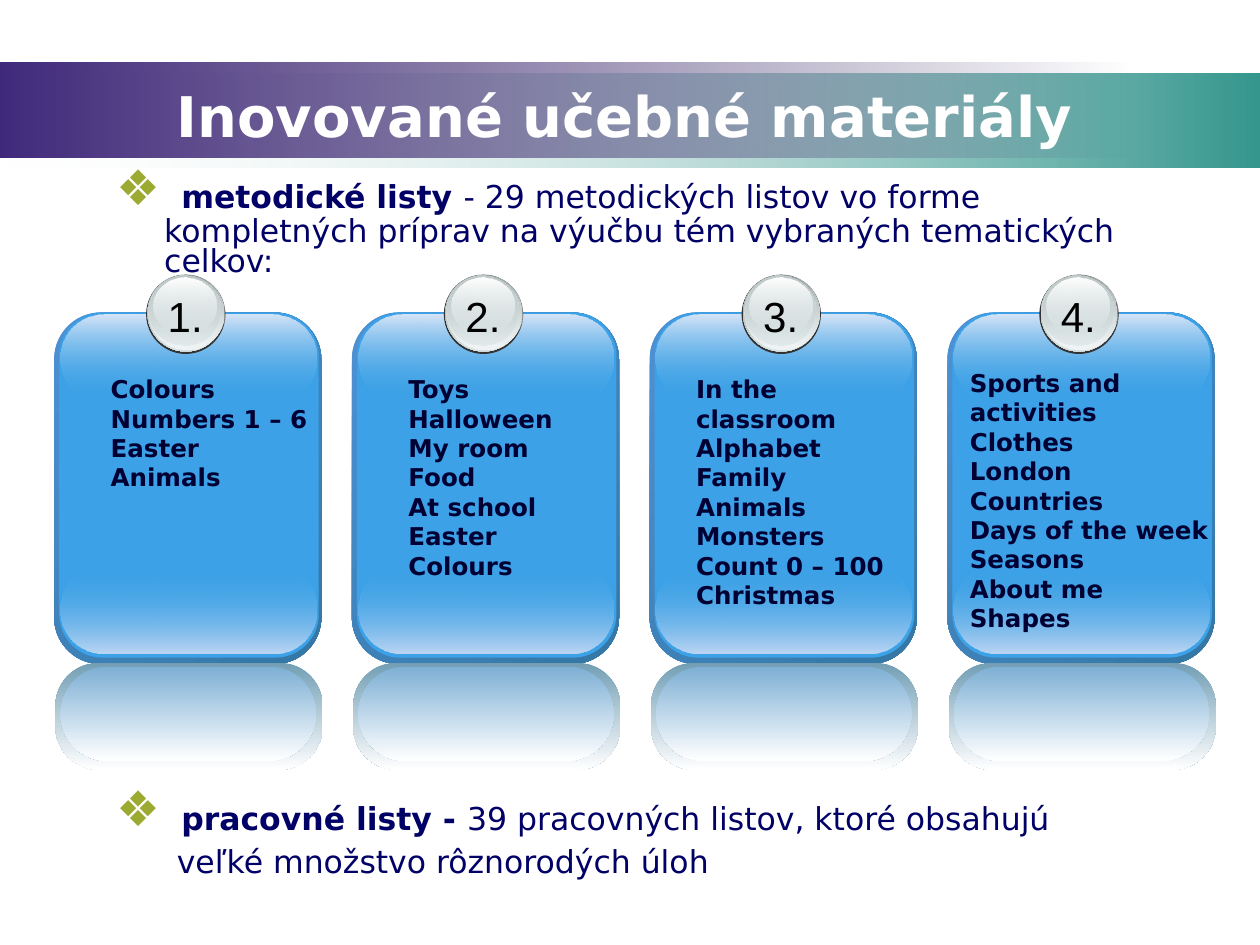
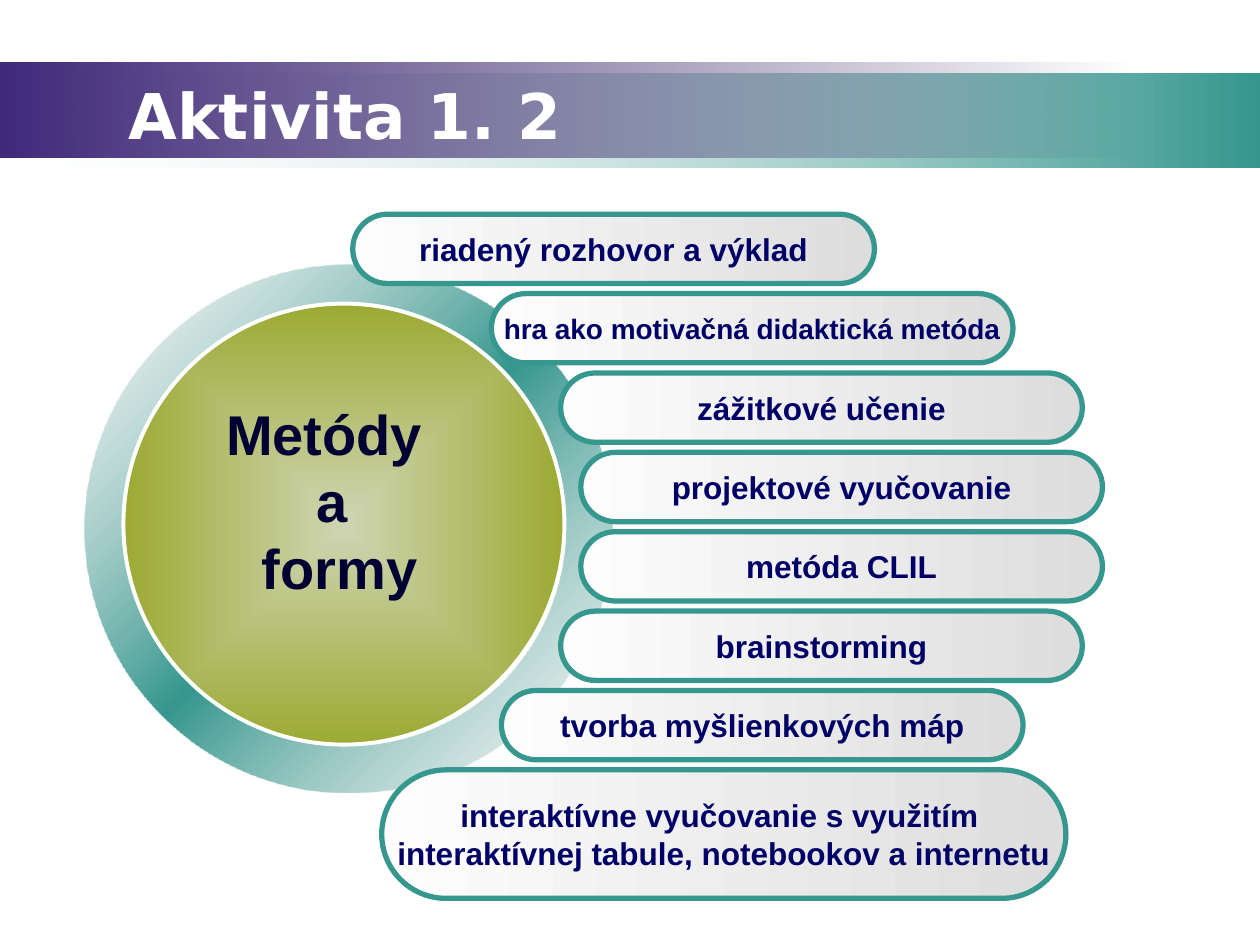
import dataclasses

import lxml.etree
import pptx
import pptx.dml.color
import pptx.enum.shapes
import pptx.enum.text
import pptx.oxml.ns
import pptx.util

SHAPE = pptx.enum.shapes.MSO_SHAPE
ALIGN = pptx.enum.text.PP_ALIGN
ANCHOR = pptx.enum.text.MSO_ANCHOR
qn = pptx.oxml.ns.qn

# The slide is a grid of 100 columns by 75 rows
SLIDE_WIDTH = pptx.util.Inches(10)
SLIDE_HEIGHT = pptx.util.Inches(7.5)
CELL = SLIDE_WIDTH // 100


@dataclasses.dataclass(frozen=True)
class Theme:
    heading_font: str = "DejaVu Sans"
    label_font: str = "Arial"
    white: str = "FFFFFF"
    black: str = "000000"
    navy: str = "000066"
    ink: str = "000033"
    teal: str = "35978E"
    mist: str = "ADC8C5"
    olive: str = "9CAA32"
    blue: str = "3CA1E6"
    silver: str = "D6E1E2"
    rim: str = "333333"
    list_size: int = 14
    small_size: int = 16
    body_size: int = 18
    number_size: int = 24
    bullet_size: int = 28
    title_size: int = 32
    large_title_size: int = 36


THEME = Theme()

# Gradients: (stops of position, colour, opacity) and angle
BANDS = [
    ((0, 5.8, 100, 7.5), ([(0, "F1F5F4", 0), (100, THEME.teal, 100)], 0)),
    ((0, 5, 90, 7.5), ([(0, "40297B", 100), (100, "2E1D58", 0)], 0)),
]
RING_FILL = ([(0, THEME.mist, 12), (50, THEME.teal, 100), (100, THEME.mist, 12)], 45)
DISC_FILL = ([(0, "CFD5B4", 100), (100, THEME.olive, 100)], None)
PILL_FILL = ([(0, "FDFDFD", 100), (100, "DDDDDD", 100)], 0)


def down(start, end, start_opacity=100, end_opacity=100):
    return [(0, start, start_opacity), (100, end, end_opacity)], 90


# Layers of one card, with columns counted from the card's left edge
CARD_LAYERS = [
    (SHAPE.ROUNDED_RECTANGLE, (0, 24.8, 21.2, 27.9), 0.175,
     ([(0, "4E91D4", 100), (100, "3477A4", 100)], 45)),
    (SHAPE.ROUNDED_RECTANGLE, (0.4, 24.8, 20.6, 27.4), 0.167, THEME.blue),
    (SHAPE.ROUNDED_RECTANGLE, (0.5, 45, 20.3, 6.9), 0.5, down(THEME.blue, "BDD6F3", 0)),
    (SHAPE.ROUNDED_RECTANGLE, (0.5, 25, 20.3, 6.9), 0.5, down("D7E5F7", THEME.blue, 100, 0)),
    (SHAPE.ROUNDED_RECTANGLE, (0.1, 52.6, 21.2, 8.5), 0.404, down("729EB4", THEME.white)),
    (SHAPE.ROUNDED_RECTANGLE, (0.5, 52.9, 20.3, 7.5), 0.5, down("7DAFD4", THEME.white)),
    (SHAPE.OVAL, (7.3, 21.8, 6.3, 6.3), None, THEME.rim),
    (SHAPE.OVAL, (7.4, 21.8, 6.1, 6.1), None, down("99A1A2", THEME.silver)),
    (SHAPE.OVAL, (7.5, 21.8, 6, 5.9), None, down(THEME.silver, "F2F5F5", 0)),
    (SHAPE.OVAL, (7.5, 21.9, 5.7, 5.5), None, down("C1CBCC", THEME.silver, 100, 48)),
    (SHAPE.OVAL, (7.9, 22, 5, 4.5), None, down(THEME.white, THEME.silver, 100, 38)),
]
CARD_LEFT, CARD_PITCH = 4.3, 23.63

# Text of each card and its place: column in the card, row, width, height
CARDS = [
    (["Colours", "Numbers 1 – 6", "Easter", "Animals"], (3.5, 29.2, 20.2, 10.4)),
    (["Toys", "Halloween", "My room", "Food", "At school", "Easter", "Colours"],
     (3.5, 29.2, 20.2, 18.2)),
    (["In the classroom", "Alphabet", "Family", "Animals", "Monsters",
      "Count 0 – 100", "Christmas"], (2.7, 29.2, 20.2, 19.9)),
    (["Sports and activities", "Clothes", "London", "Countries", "Days of the week",
      "Seasons", "About me", "Shapes"], (0.8, 28.7, 22.8, 22.2)),
]

# Pills from top to bottom: column, width, height, size, lines
PILL_TOP, PILL_PITCH = 17, 6.3
PILLS = [
    (28, 41.4, 5.5, THEME.body_size, ["riadený rozhovor a výklad"]),
    (39, 41.4, 5.5, THEME.small_size, ["hra ako motivačná didaktická metóda"]),
    (44.5, 41.4, 5.5, THEME.body_size, ["zážitkové učenie"]),
    (46.1, 41.4, 5.5, THEME.body_size, ["projektové vyučovanie"]),
    (46.1, 41.4, 5.5, THEME.body_size, ["metóda CLIL"]),
    (44.5, 41.4, 5.5, THEME.body_size, ["brainstorming"]),
    (39.8, 41.4, 5.5, THEME.body_size, ["tvorba myšlienkových máp"]),
    (30.3, 54.3, 10.2, THEME.body_size,
     ["interaktívne vyučovanie s využitím ", "interaktívnej tabule, notebookov a internetu"]),
]


# Basic helpers
def assign(target, values):
    for name, value in values.items():
        setattr(target, name, value)


def place(area):
    return [round(length * CELL) for length in area]


def colour(value):
    return pptx.dml.color.RGBColor.from_string(value)


def element(parent, tag, **attributes):
    child = lxml.etree.SubElement(parent, qn(tag))
    for name, value in attributes.items():
        child.set(name, str(value))
    return child


def add_gradient(shape, stops, angle):
    properties = shape._element.spPr
    gradient = element(properties, "a:gradFill", rotWithShape=1)
    stop_list = element(gradient, "a:gsLst")
    for position, value, opacity in stops:
        stop = element(stop_list, "a:gs", pos=position * 1000)
        stop_colour = element(stop, "a:srgbClr", val=value)
        if opacity < 100:
            element(stop_colour, "a:alpha", val=opacity * 1000)
    if angle is None:
        centre = element(gradient, "a:path", path="shape")
        element(centre, "a:fillToRect", l=50000, t=50000, r=50000, b=50000)
    else:
        element(gradient, "a:lin", ang=angle * 60000, scaled=1)
    properties.find(qn("a:prstGeom")).addnext(gradient)


def add_shape(slide, kind, area, fill, adjustment=None, line=None):
    shape = slide.shapes.add_shape(kind, *place(area))
    shape.shadow.inherit = False
    if adjustment is not None:
        shape.adjustments[0] = adjustment
    if isinstance(fill, str):
        shape.fill.solid()
        shape.fill.fore_color.rgb = colour(fill)
    else:
        add_gradient(shape, *fill)
    if line:
        line_colour, width = line
        shape.line.color.rgb = colour(line_colour)
        shape.line.width = pptx.util.Pt(width)
    else:
        shape.line.fill.background()
    return shape


def add_run(paragraph, text, size, value, name=THEME.heading_font, bold=True):
    run = paragraph.add_run()
    run.text = text
    assign(run.font, {"size": pptx.util.Pt(size), "name": name, "bold": bold})
    run.font.color.rgb = colour(value)
    return run


def write_lines(shape, lines, size, value, name=THEME.heading_font, bold=True,
                align=ALIGN.LEFT, anchor=ANCHOR.TOP, wrap=True):
    frame = shape.text_frame
    assign(frame, {"word_wrap": wrap, "vertical_anchor": anchor})
    runs = []
    for index, text in enumerate(lines):
        paragraph = frame.add_paragraph() if index else frame.paragraphs[0]
        paragraph.alignment = align
        runs.append(add_run(paragraph, text, size, value, name, bold))
    return runs


def add_text(slide, area, lines, size, value, **formats):
    box = slide.shapes.add_textbox(*place(area))
    return write_lines(box, lines, size, value, **formats)


def add_text_shadow(run):
    effects = lxml.etree.Element(qn("a:effectLst"))
    shadow = element(effects, "a:outerShdw", dist=35921, dir=2700000, algn="ctr")
    element(shadow, "a:srgbClr", val=THEME.black)
    run.font._element.find(qn("a:latin")).addprevious(effects)


# Elements of these slides
def add_titled_slide(presentation, title, size, align):
    slide = presentation.slides.add_slide(presentation.slide_layouts[6])
    for area, fill in BANDS:
        add_shape(slide, SHAPE.RECTANGLE, area, fill)
    add_text(slide, (9.2, 6, 80.8, 6.2), [title], size, THEME.white,
             align=align, anchor=ANCHOR.MIDDLE)
    return slide


def set_paragraph(paragraph, margin, indent):
    assign(paragraph, {"line_spacing": 0.8, "space_before": pptx.util.Pt(5.6)})
    properties = paragraph._p.get_or_add_pPr()
    properties.set("marL", str(round(margin * CELL)))
    properties.set("indent", str(round(indent * CELL)))
    return properties


def add_bullet(slide, area, term, explanation, continuation=None):
    frame = slide.shapes.add_textbox(*place(area)).text_frame
    frame.word_wrap = True
    paragraph = frame.paragraphs[0]
    properties = set_paragraph(paragraph, 3.75, -3.75)
    element(element(properties, "a:buClr"), "a:srgbClr", val=THEME.olive)
    element(properties, "a:buFont", typeface=THEME.heading_font)
    element(properties, "a:buChar", char="❖")
    add_run(paragraph, " ", THEME.bullet_size, THEME.navy)
    add_run(paragraph, term, THEME.body_size, THEME.navy)
    add_run(paragraph, explanation, THEME.body_size, THEME.navy, bold=False)
    if continuation:
        paragraph = frame.add_paragraph()
        set_paragraph(paragraph, 4.75, 0)
        add_run(paragraph, continuation, THEME.body_size, THEME.navy, bold=False)


def add_card(slide, index, topics, text_area):
    left = CARD_LEFT + index * CARD_PITCH
    for kind, (column, *rest), adjustment, fill in CARD_LAYERS:
        add_shape(slide, kind, (left + column, *rest), fill, adjustment)
    add_text(slide, (left + 8, 22.6, 4.8, 5), [f"{index + 1}."], THEME.number_size,
             THEME.black, name=THEME.label_font, bold=False, align=ALIGN.CENTER, wrap=False)
    column, *rest = text_area
    add_text(slide, (left + column, *rest), topics, THEME.list_size, THEME.ink)


def add_pill(slide, index, column, width, height, size, lines):
    area = (column, PILL_TOP + index * PILL_PITCH, width, height)
    pill = add_shape(slide, SHAPE.ROUNDED_RECTANGLE, area, PILL_FILL, 0.5, (THEME.teal, 3))
    write_lines(pill, lines, size, THEME.navy, name=THEME.label_font,
                align=ALIGN.CENTER, anchor=ANCHOR.MIDDLE, wrap=False)


# Slides
def build_materials(presentation):
    slide = add_titled_slide(presentation, "Inovované učebné materiály",
                             THEME.title_size, ALIGN.CENTER)
    add_bullet(slide, (8.3, 13.1, 83.2, 9), "metodické listy ",
               "- 29 metodických listov vo forme kompletných príprav na výučbu tém "
               "vybraných tematických celkov:")
    for index, (topics, text_area) in enumerate(CARDS):
        add_card(slide, index, topics, text_area)
    add_bullet(slide, (8.3, 62.4, 83.2, 9), "pracovné listy - ",
               "39 pracovných listov, ktoré obsahujú", "veľké množstvo rôznorodých úloh")


def build_methods(presentation):
    slide = add_titled_slide(presentation, "Aktivita 1. 2",
                             THEME.large_title_size, ALIGN.LEFT)
    add_shape(slide, SHAPE.DONUT, (6.7, 21, 41.9, 41.9), RING_FILL, 0.09)
    add_shape(slide, SHAPE.OVAL, (9.8, 24.1, 35, 35), DISC_FILL, line=(THEME.white, 2.25))
    for index, pill in enumerate(PILLS):
        add_pill(slide, index, *pill)
    runs = add_text(slide, (16.9, 31.2, 18.9, 17.2), ["Metódy ", "a", " formy"],
                    THEME.title_size, THEME.ink, name=THEME.label_font,
                    align=ALIGN.CENTER, wrap=False)
    for run in runs:
        add_text_shadow(run)


def main():
    presentation = pptx.Presentation()
    assign(presentation, {"slide_width": SLIDE_WIDTH, "slide_height": SLIDE_HEIGHT})
    build_materials(presentation)
    build_methods(presentation)
    presentation.save("out.pptx")


if __name__ == "__main__":
    main()
